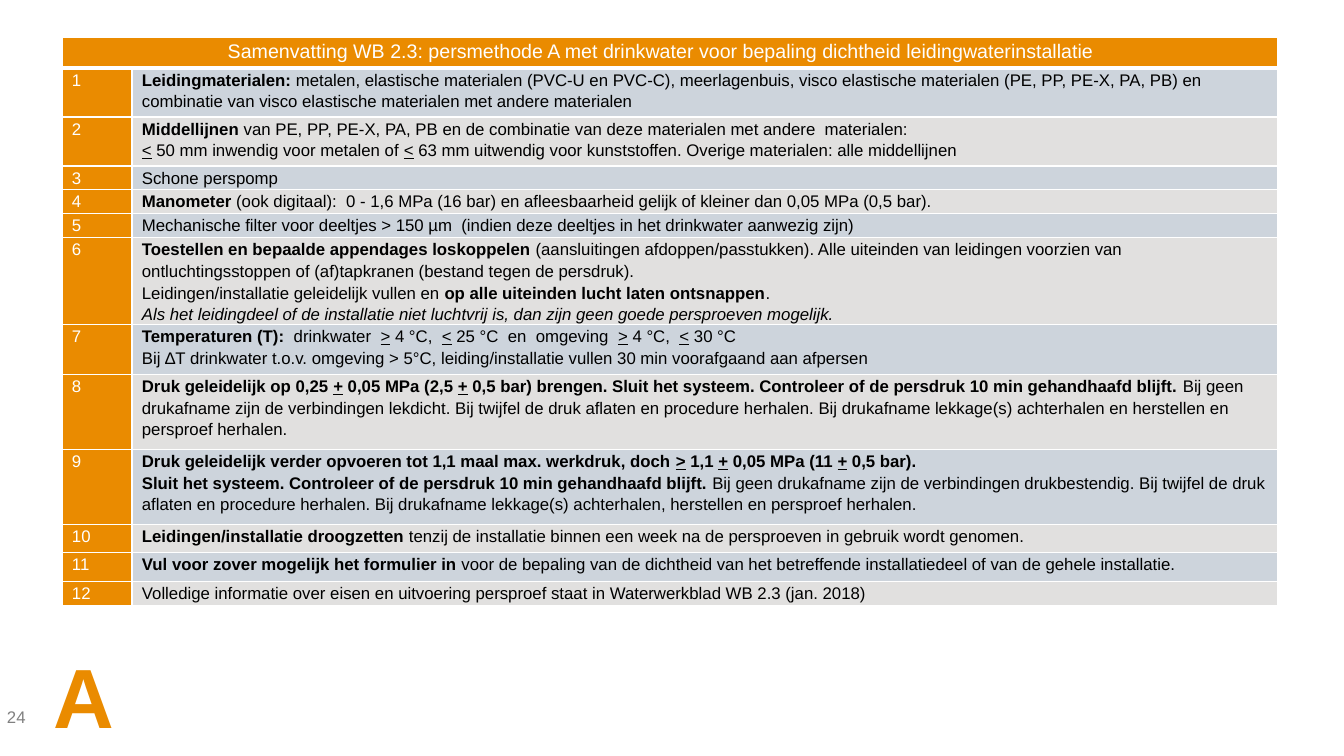
from lxml.etree import SubElement
from pptx import Presentation
from pptx.dml.color import RGBColor
from pptx.enum.text import MSO_ANCHOR, MSO_AUTO_SIZE, PP_ALIGN
from pptx.oxml import parse_xml
from pptx.oxml.ns import nsdecls, qn
from pptx.util import Emu, Pt

THEME = {
    "font": "Arial",
    "orange": "EA8B00", "white": "FFFFFF", "black": "000000", "grey": "808080",
    "bands": ("CDD4DC", "E1E0DF"),
    "title": 14, "body": 12, "letter": 60,
    "line_spacing": 1.15, "thin_border": 1, "thick_border": 3,
}


def px(count):
    return Emu(round(count * 914400 / 100.8))


def write(para, text, size, color):
    """Add text run by run: *bold*, ~italic~, _underlined_."""
    for b, bold_part in enumerate(text.split("*")):
        for i, italic_part in enumerate(bold_part.split("~")):
            for u, words in enumerate(italic_part.split("_")):
                if not words:
                    continue
                span = para.add_run()
                span.text = words
                span.font.name = THEME["font"]
                span.font.size = Pt(size)
                span.font.color.rgb = RGBColor.from_string(color)
                span.font.bold = b % 2 == 1
                span.font.italic = i % 2 == 1
                span.font.underline = u % 2 == 1


TITLE = ("Samenvatting WB 2.3: persmethode A met drinkwater voor bepaling "
         "dichtheid leidingwaterinstallatie")

# Row height in px, then the paragraphs of the step
STEPS = [
    (49, ["*Leidingmaterialen: *metalen, elastische materialen (PVC-U en PVC-C), "
          "meerlagenbuis, visco elastische materialen (PE, PP, PE-X, PA, PB) en "
          "combinatie van visco elastische materialen met andere materialen"]),
    (49, ["*Middellijnen *van PE, PP, PE-X, PA, PB en de combinatie van deze "
          "materialen met andere  materialen:",
          "_<_ 50 mm inwendig voor metalen of _<_ 63 mm uitwendig voor kunststoffen. "
          "Overige materialen: alle middellijnen"]),
    (24, ["Schone perspomp"]),
    (24, ["*Manometer* (ook digitaal):  0 - 1,6 MPa (16 bar) en afleesbaarheid "
          "gelijk of kleiner dan 0,05 MPa (0,5 bar)."]),
    (24, ["Mechanische filter voor deeltjes > 150 µm  (indien deze deeltjes in het "
          "drinkwater aanwezig zijn)"]),
    (86, ["*Toestellen en bepaalde appendages loskoppelen *(aansluitingen "
          "afdoppen/passtukken). Alle uiteinden van leidingen voorzien van "
          "ontluchtingsstoppen of (af)tapkranen (bestand tegen de persdruk).",
          "Leidingen/installatie geleidelijk vullen en *op alle uiteinden lucht "
          "laten ontsnappen*.",
          "~Als het leidingdeel of de installatie niet luchtvrij is, dan zijn geen "
          "goede persproeven mogelijk.~"]),
    (50, ["*Temperaturen (T):  *drinkwater  _>_ 4 °C,  _<_ 25 °C  en  omgeving  "
          "_>_ 4 °C,  _<_ 30 °C",
          "Bij ∆T drinkwater t.o.v. omgeving > 5°C, leiding/installatie vullen "
          "30 min voorafgaand aan afpersen"]),
    (75, ["*Druk geleidelijk op 0,25 _+_ 0,05 MPa (2,5 _+_ 0,5 bar) brengen. Sluit "
          "het systeem. Controleer of de persdruk 10 min gehandhaafd blijft. *Bij "
          "geen drukafname zijn de verbindingen lekdicht. Bij twijfel de druk "
          "aflaten en procedure herhalen. Bij drukafname lekkage(s) achterhalen en "
          "herstellen en persproef herhalen."]),
    (75, ["*Druk geleidelijk verder opvoeren tot 1,1 maal max. werkdruk, doch "
          "_>_ 1,1 _+_ 0,05 MPa (11 _+_ 0,5 bar).*",
          "*Sluit het systeem. Controleer of de persdruk 10 min gehandhaafd blijft. "
          "*Bij geen drukafname zijn de verbindingen drukbestendig. Bij twijfel de "
          "druk aflaten en procedure herhalen. Bij drukafname lekkage(s) "
          "achterhalen, herstellen en persproef herhalen."]),
    (28, ["*Leidingen/installatie droogzetten *tenzij de installatie binnen een "
          "week na de persproeven in gebruik wordt genomen."]),
    (29, ["*Vul voor zover mogelijk het formulier in *voor de bepaling van de "
          "dichtheid van het betreffende installatiedeel of van de gehele "
          "installatie."]),
    (24, ["Volledige informatie over eisen en uitvoering persproef staat in "
          "Waterwerkblad WB 2.3 (jan. 2018)"]),
]

deck = Presentation()
deck.slide_width, deck.slide_height = px(1344), px(756)
page = deck.slides.add_slide(deck.slide_layouts[6])

# Table frame
heights = [31] + [height for height, _ in STEPS]
table = page.shapes.add_table(len(heights), 2, px(62), px(37),
                              px(1216), px(sum(heights))).table
table.first_row = table.horz_banding = False
for column, width in zip(table.columns, (70, 1146)):
    column.width = px(width)
for row, height in zip(table.rows, heights):
    row.height = px(height)
table.cell(0, 0).merge(table.cell(0, 1))

# Cell contents: title row, then number and step
contents = [([TITLE], [])]
contents += [([str(n)], lines) for n, (_, lines) in enumerate(STEPS, 1)]
for r, row_contents in enumerate(contents):
    for c, lines in enumerate(row_contents):
        cell = table.cell(r, c)
        is_step = r > 0 and c == 1
        cell.margin_left = cell.margin_right = px(10)
        cell.margin_top = cell.margin_bottom = 0
        cell.fill.solid()
        cell.fill.fore_color.rgb = RGBColor.from_string(
            THEME["bands"][(r - 1) % 2] if is_step else THEME["orange"])
        for n, line in enumerate(lines):
            frame = cell.text_frame
            para = frame.add_paragraph() if n else frame.paragraphs[0]
            para.line_spacing = THEME["line_spacing"]
            write(para, line, THEME["body"] if r else THEME["title"],
                  THEME["black"] if is_step else THEME["white"])

        # White borders, thicker under the title row
        properties = cell._tc.get_or_add_tcPr()
        for position, side in enumerate("LRTB"):
            under_title = (r, side) in ((0, "B"), (1, "T"))
            weight = THEME["thick_border" if under_title else "thin_border"]
            border = parse_xml(f'<a:ln{side} {nsdecls("a")} w="{Pt(weight)}"/>')
            fill = SubElement(border, qn("a:solidFill"))
            SubElement(fill, qn("a:srgbClr"), val=THEME["white"])
            properties.insert(position, border)

title_cell = table.cell(0, 0)
title_cell.margin_right = px(28)
title_cell.text_frame.paragraphs[0].alignment = PP_ALIGN.CENTER

# Method letter
letter = page.shapes.add_textbox(px(44), px(640), px(82), px(112)).text_frame
letter.word_wrap = False
letter.auto_size = MSO_AUTO_SIZE.SHAPE_TO_FIT_TEXT
write(letter.paragraphs[0], "*A*", THEME["letter"], THEME["orange"])

# Page number
number = page.shapes.add_textbox(px(7), px(697), px(72), px(40)).text_frame
number.word_wrap = True
number.vertical_anchor = MSO_ANCHOR.MIDDLE
number.margin_left = number.margin_right = number.margin_top = number.margin_bottom = 0
write(number.paragraphs[0], "24", THEME["body"], THEME["grey"])

deck.save("out.pptx")
